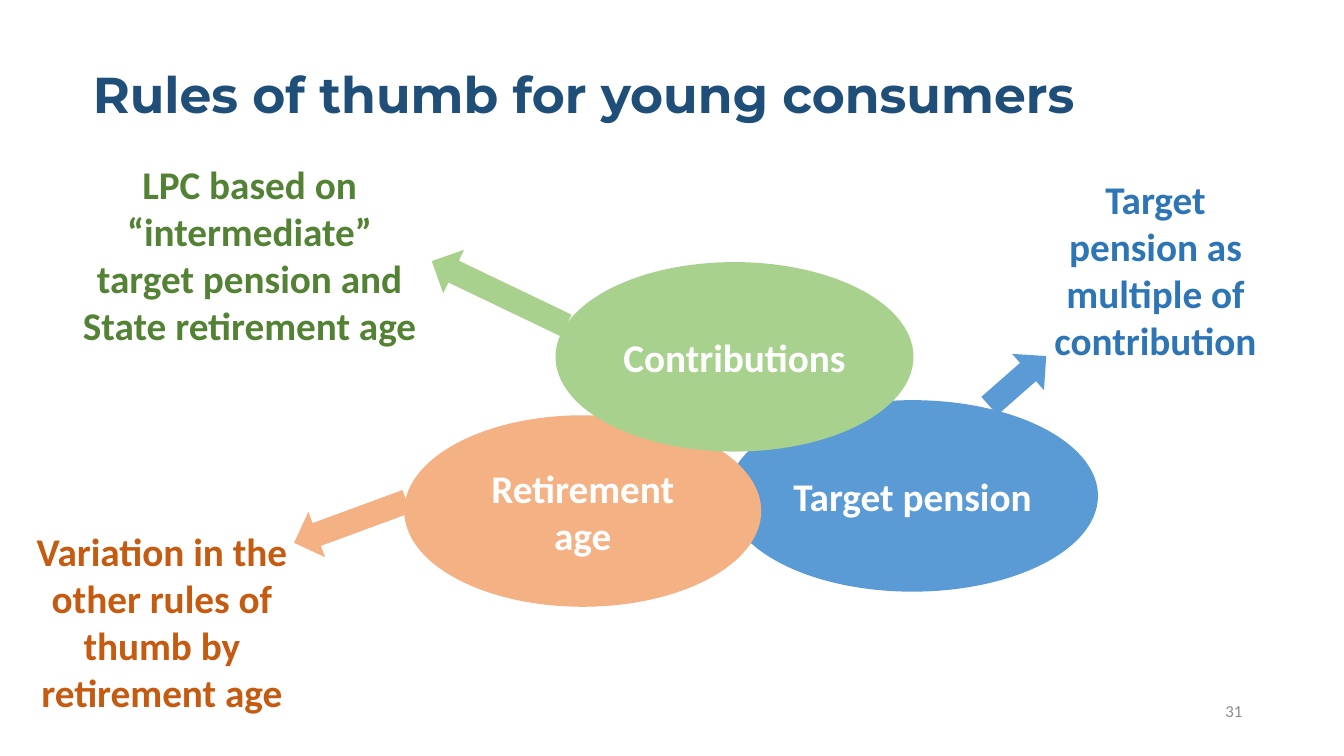
from pptx import Presentation
from pptx.dml.color import RGBColor
from pptx.enum.shapes import MSO_SHAPE
from pptx.enum.text import MSO_ANCHOR, PP_ALIGN
from pptx.util import Inches, Pt

NAVY = RGBColor(0x1F, 0x4E, 0x79)
GREY = RGBColor(0x8C, 0x8C, 0x8C)
WHITE = RGBColor(0xFF, 0xFF, 0xFF)
BLUE = RGBColor(0x5B, 0x9B, 0xD5)
DARK_BLUE = RGBColor(0x2E, 0x75, 0xB6)
ORANGE = RGBColor(0xF4, 0xB1, 0x83)
DARK_ORANGE = RGBColor(0xC5, 0x5A, 0x11)
GREEN = RGBColor(0xA9, 0xD1, 0x8E)
DARK_GREEN = RGBColor(0x54, 0x82, 0x35)

# Content: boxes are left, top, width, height in inches
TITLE = "Rules of thumb for young consumers"
PAGE_NUMBER = "31"
ELLIPSES = [
    ("Target pension", (7.21, 3.97, 3.68, 1.9), BLUE),
    ("Retirement age", (4.01, 4.12, 3.54, 1.9), ORANGE),
    ("Contributions", (5.51, 2.6, 3.55, 1.88), GREEN),
]
ARROWS = [
    ((4.21, 2.67, 1.48, 0.48), 205.6, GREEN),
    ((2.88, 4.94, 1.19, 0.48), 159.8, ORANGE),
    ((9.72, 3.54, 0.75, 0.48), 318.7, BLUE),
]
RULES = [
    ("LPC based on “intermediate” target pension and State retirement age",
     (0.64, 1.54, 3.67, 2.46), DARK_GREEN),
    ("Variation in the other rules of thumb by retirement age",
     (-0.04, 5.18, 3.29, 1.99), DARK_ORANGE),
    ("Target pension as multiple of contribution",
     (10.22, 1.69, 2.48, 1.99), DARK_BLUE),
]


def lengths(box):
    return [Inches(value) for value in box]


def write(shape, text, color, size=28, font="Calibri", bold=True,
          align=PP_ALIGN.CENTER, anchor=MSO_ANCHOR.MIDDLE, line_spacing=None):
    frame = shape.text_frame
    frame.word_wrap = True
    frame.vertical_anchor = anchor
    paragraph = frame.paragraphs[0]
    paragraph.alignment = align
    paragraph.line_spacing = line_spacing
    run = paragraph.add_run()
    run.text = text
    run.font.name = font
    run.font.size = Pt(size)
    run.font.bold = bold
    run.font.color.rgb = color


def add_filled(slide, kind, box, color):
    shape = slide.shapes.add_shape(kind, *lengths(box))
    shape.shadow.inherit = False
    shape.fill.solid()
    shape.fill.fore_color.rgb = color
    shape.line.fill.background()
    return shape


presentation = Presentation()
presentation.slide_width = Inches(13.33)
presentation.slide_height = Inches(7.5)
slide = presentation.slides.add_slide(presentation.slide_layouts[5])

# Title and page number
title = slide.shapes.title
title.left, title.top, title.width, title.height = lengths((0.82, 0.45, 11.6, 1.03))
write(title, TITLE, NAVY, size=36, font="Montserrat", align=PP_ALIGN.LEFT,
      line_spacing=0.9)
number = slide.shapes.add_textbox(*lengths((9.42, 6.85, 3, 0.4)))
write(number, PAGE_NUMBER, GREY, size=12, bold=False, align=PP_ALIGN.RIGHT)

# Overlapping ellipses
for text, box, color in ELLIPSES:
    write(add_filled(slide, MSO_SHAPE.OVAL, box, color), text, WHITE)

# Arrows pointing out to the rules
for box, angle, color in ARROWS:
    add_filled(slide, MSO_SHAPE.RIGHT_ARROW, box, color).rotation = angle

# Rules of thumb
for text, box, color in RULES:
    write(slide.shapes.add_textbox(*lengths(box)), text, color, anchor=MSO_ANCHOR.TOP)

presentation.save("out.pptx")
